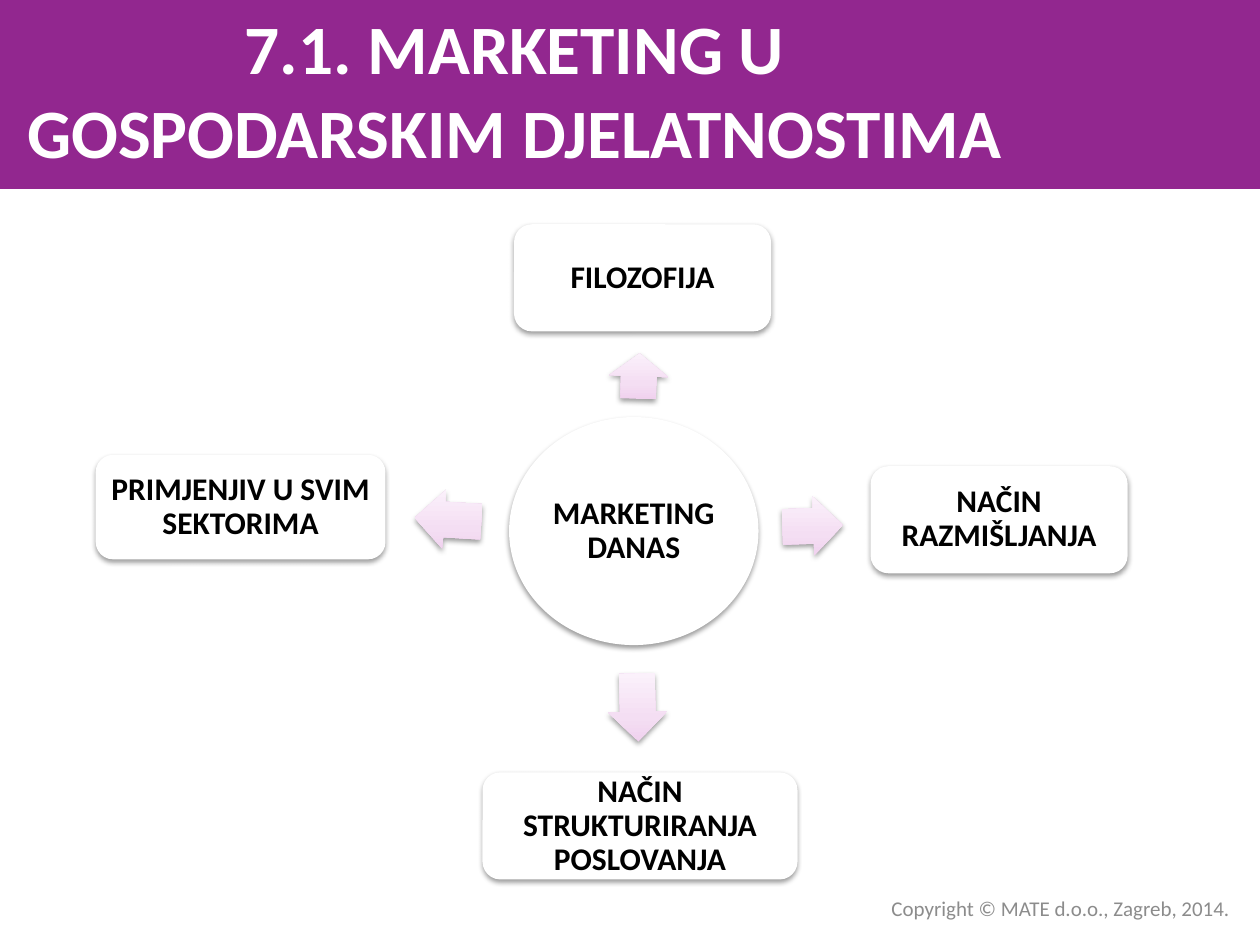
import pptx
import pptx.util
import pptx.oxml
import pptx.dml.color
import pptx.enum.shapes
import pptx.enum.text
from pptx.oxml.ns import nsdecls

Inches, Pt = pptx.util.Inches, pptx.util.Pt
Kind = pptx.enum.shapes.MSO_SHAPE
Align = pptx.enum.text.PP_ALIGN
Anchor = pptx.enum.text.MSO_ANCHOR

COLOR = {
    "band": "92278F", "white": "FFFFFF", "text": "000000", "note": "8C8C8C",
    "deep": "F0D1EE", "mid": "F4DEF3", "pale": "FBF1FB",
}
TITLE = {"size": Pt(39.6), "bold": True, "name": "Calibri"}
LABEL = {"size": Pt(18), "bold": True, "name": "Calibri"}
NOTE = {"size": Pt(12), "bold": False, "name": "Calibri"}

# Outer nodes: text, shape, box
NODES = [
    ("FILOZOFIJA", Kind.FLOWCHART_ALTERNATE_PROCESS, (4.08, 1.78, 2.04, 0.85)),
    ("NAČIN RAZMIŠLJANJA", Kind.FLOWCHART_ALTERNATE_PROCESS, (6.91, 3.7, 2.04, 0.85)),
    ("NAČIN STRUKTURIRANJA POSLOVANJA", Kind.FLOWCHART_ALTERNATE_PROCESS,
     (3.83, 6.13, 2.5, 0.85)),
    ("PRIMJENJIV U SVIM SEKTORIMA", Kind.ROUNDED_RECTANGLE, (0.76, 3.61, 2.3, 0.83)),
]
# Arrows from the hub: box, rotation
ARROWS = [
    ((4.89, 2.75, 0.36, 0.47), 272.1),
    ((6.21, 3.94, 0.48, 0.47), 358.1),
    ((4.79, 5.38, 0.54, 0.47), 88.7),
    ((3.29, 3.89, 0.53, 0.47), 183.5),
]


def rgb(key):
    return pptx.dml.color.RGBColor.from_string(COLOR[key])


def place(shape, box):
    for name, val in zip(("left", "top", "width", "height"), box):
        setattr(shape, name, Inches(val))


def write(shape, text, form, color, align, inset=None, line=None):
    frame = shape.text_frame
    frame.word_wrap = True
    frame.auto_size = pptx.enum.text.MSO_AUTO_SIZE.NONE
    frame.vertical_anchor = Anchor.MIDDLE
    if inset is not None:
        for side in ("left", "top", "right", "bottom"):
            setattr(frame, "margin_" + side, Inches(inset))
    frame.text = text
    para = frame.paragraphs[0]
    para.alignment = align
    para.line_spacing = line
    for name, val in form.items():
        setattr(para.runs[0].font, name, val)
    para.runs[0].font.color.rgb = rgb(color)


def draw(slide, kind, box, fill="white"):
    shape = slide.shapes.add_shape(kind, *map(Inches, box))
    shape.shadow.inherit = False
    shape.fill.solid()
    shape.fill.fore_color.rgb = rgb(fill)
    shape.line.fill.background()
    return shape


def shade(shape):
    # Soft shadow straight below the shape
    effect = shape._element.spPr.find(pptx.oxml.ns.qn("a:effectLst"))
    effect.append(pptx.oxml.parse_xml(
        f'<a:outerShdw {nsdecls("a")} blurRad="{Pt(3.1)}" dist="{Pt(1.6)}" '
        'dir="5400000" rotWithShape="0"><a:srgbClr val="000000">'
        '<a:alpha val="38000"/></a:srgbClr></a:outerShdw>'))


def tint(shape):
    # Upright gradient that ignores the rotation of the arrow
    stops = "".join(
        f'<a:gs pos="{pos * 1000}"><a:srgbClr val="{COLOR[key]}"/></a:gs>'
        for pos, key in ((0, "deep"), (35, "mid"), (100, "pale")))
    grad = pptx.oxml.parse_xml(
        f'<a:gradFill {nsdecls("a")} rotWithShape="0"><a:gsLst>{stops}</a:gsLst>'
        '<a:lin ang="16200000" scaled="0"/></a:gradFill>')
    props = shape._element.spPr
    props.replace(props.find(pptx.oxml.ns.qn("a:solidFill")), grad)


def header(slide, box):
    band = draw(slide, Kind.RECTANGLE, box, "band")
    slide.shapes._spTree.insert(2, band._element)
    left, top, _, height = box
    title = slide.shapes.title
    place(title, (left, top + 0.08, 8.17, height - 0.25))
    write(title, "7.1. MARKETING U GOSPODARSKIM DJELATNOSTIMA",
          TITLE, "white", Align.CENTER)


def node(slide, text, kind, box):
    shape = draw(slide, kind, box)
    shade(shape)
    write(shape, text, LABEL, "text", Align.CENTER, 0.03, 0.9)


def arrow(slide, box, turn):
    shape = draw(slide, Kind.RIGHT_ARROW, box)
    shape.adjustments[0], shape.adjustments[1] = 0.6, 0.5
    shape.rotation = turn
    tint(shape)
    shade(shape)


def wheel(slide, box):
    node(slide, "MARKETING DANAS", Kind.OVAL, box)
    for (text, kind, spot), (way, turn) in zip(NODES, ARROWS):
        arrow(slide, way, turn)
        node(slide, text, kind, spot)


def footer(slide, box):
    note = slide.shapes.add_textbox(*map(Inches, box))
    write(note, "Copyright © MATE d.o.o., Zagreb, 2014.", NOTE, "note", Align.RIGHT)


def main():
    deck = pptx.Presentation()
    deck.slide_width, deck.slide_height = Inches(10), Inches(7.5)
    slide = deck.slides.add_slide(deck.slide_layouts[5])
    header(slide, (0, 0, 10, 1.5))
    wheel(slide, (4.04, 3.31, 1.98, 1.81))
    footer(slide, (4.69, 7.06, 5.17, 0.3))
    deck.save("out.pptx")


if __name__ == "__main__":
    main()
